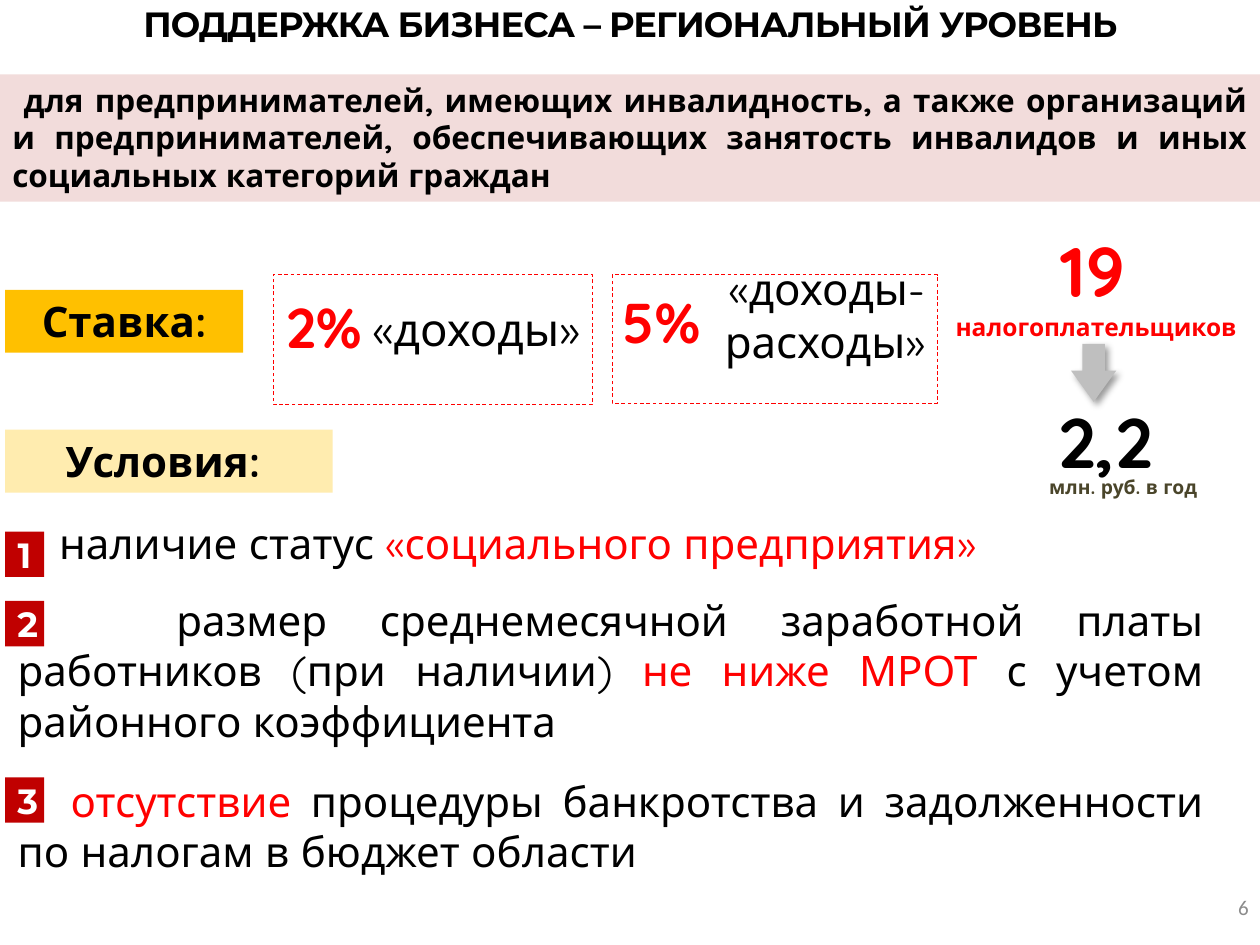
from dataclasses import dataclass
from typing import NamedTuple

from lxml import etree
from pptx import Presentation, util as u
from pptx.dml.color import RGBColor
from pptx.enum import dml, shapes, text
from pptx.oxml import parse_xml
from pptx.oxml.ns import nsdecls, qn

COLS, ROWS = 100, 75  # slide grid
AL = text.PP_ALIGN
TOP, MIDDLE = text.MSO_ANCHOR.TOP, text.MSO_ANCHOR.MIDDLE


@dataclass(frozen=True)
class Theme:
    head: str = "Montserrat"
    body: str = "Quicksand"
    number: str = "Calibri"
    ink: str = "000000"
    white: str = "FFFFFF"
    accent: str = "FF0000"
    badge: str = "C00000"
    band: str = "F2DCDB"
    rate: str = "FFC000"
    terms: str = "FFECAF"
    arrow: str = "BFBFBF"
    olive: str = "4A452A"
    grey: str = "8C8C8C"
    tiny: int = 11
    note: int = 12
    small: int = 14
    lead: int = 18
    title: int = 20
    text: int = 24
    split: int = 25
    income: int = 26
    rate_size: int = 32
    big: int = 40


class Box(NamedTuple):
    col: float
    row: float
    cols: float
    rows: float


class Condition(NamedTuple):
    runs: list
    indent: float  # first line, in columns
    before: int  # points
    badge_row: float


T = Theme()
prs = Presentation()
prs.slide_width, prs.slide_height = u.Inches(10), u.Inches(7.5)
slide = prs.slides.add_slide(prs.slide_layouts[1])


def across(cols: float) -> int:
    return round(prs.slide_width * cols / COLS)


def down(rows: float) -> int:
    return round(prs.slide_height * rows / ROWS)


def frame(box: Box) -> tuple:
    return across(box.col), down(box.row), across(box.cols), down(box.rows)


def place(sp, box: Box) -> None:
    sp.left, sp.top, sp.width, sp.height = frame(box)


def write(sp, *paragraphs, size=T.text, font=T.body, color=T.ink, bold=False,
          align=AL.LEFT, anchor=TOP, inset=(1, 0.5), spacing=0):
    """Each paragraph is a string or a list of (text, overrides) runs."""
    tf = sp.text_frame
    tf.word_wrap, tf.auto_size = True, text.MSO_AUTO_SIZE.NONE
    tf.vertical_anchor = anchor
    tf.margin_left = tf.margin_right = across(inset[0])
    tf.margin_top = tf.margin_bottom = down(inset[1])
    for i, runs in enumerate(paragraphs):
        p = tf.add_paragraph() if i else tf.paragraphs[0]
        p.alignment = align
        for words, own in [(runs, {})] if isinstance(runs, str) else runs:
            r = p.add_run()
            r.text = words
            r.font.name, r.font.bold = font, bold
            r.font.size = u.Pt(own.get("size", size))
            r.font.color.rgb = RGBColor.from_string(own.get("color", color))
            if spacing:
                r.font._element.set("spc", str(round(spacing * 100)))
    return tf


def label(box: Box, *paragraphs, **style) -> None:
    write(slide.shapes.add_textbox(*frame(box)), *paragraphs, **style)


def block(box: Box, fill=None, line=None, kind=shapes.MSO_SHAPE.RECTANGLE):
    sp = slide.shapes.add_shape(kind, *frame(box))
    sp.shadow.inherit = False
    if fill:
        sp.fill.solid()
        sp.fill.fore_color.rgb = RGBColor.from_string(fill)
    else:
        sp.fill.background()
    if line:
        sp.line.color.rgb = RGBColor.from_string(line)
        sp.line.width = u.Pt(0.5)
        sp.line.dash_style = dml.MSO_LINE.DASH
    else:
        sp.line.fill.background()
    return sp


def soft_shadow(sp) -> None:
    effects = sp._element.spPr.find(qn("a:effectLst"))
    effects.append(parse_xml(
        f'<a:outerShdw {nsdecls("a")} blurRad="{u.Pt(4)}" dist="{u.Pt(3)}" dir="2700000" '
        'algn="tl" rotWithShape="0"><a:srgbClr val="000000"><a:alpha val="40000"/>'
        '</a:srgbClr></a:outerShdw>'))


# Title and target group
title = slide.shapes.title
place(title, Box(0, -0.3, 100, 4.4))
write(title, "ПОДДЕРЖКА БИЗНЕСА – РЕГИОНАЛЬНЫЙ УРОВЕНЬ", size=T.title, font=T.head,
      bold=True, align=AL.CENTER, spacing=-0.5)
write(block(Box(0, 5.9, 100, 10.1), T.band),
      " для предпринимателей, имеющих инвалидность, а также организаций и "
      "предпринимателей, обеспечивающих занятость инвалидов и иных социальных "
      "категорий граждан", size=T.lead, bold=True, align=AL.JUSTIFY)

# Section headings
write(block(Box(0.4, 23, 18.9, 5), T.rate), "Ставка:", bold=True, align=AL.CENTER)
write(block(Box(0.4, 34.1, 26, 5), T.terms), "Условия: ", bold=True,
      align=AL.CENTER, anchor=MIDDLE)

# Rates
for outline, rate_box, rate, base_box, base, size in (
        (Box(21.7, 21.8, 25.3, 10.3), Box(21.7, 22.7, 13.3, 6.4), "2%",
         Box(20.9, 23.4, 26.1, 5.4), "«доходы»", T.income),
        (Box(48.6, 21.8, 25.8, 10.2), Box(48.4, 22.3, 12, 6.4), "5%",
         Box(48.4, 20.3, 26, 9.4), "«доходы- расходы»", T.split)):
    label(base_box, base, size=size, align=AL.RIGHT)
    label(rate_box, rate, size=T.rate_size, color=T.accent, bold=True)
    block(outline, line=T.accent)

# Result: taxpayers and yearly sum
label(Box(73.6, 17.6, 26.8, 10.1), [("19", {"size": T.big}), (" ", {})],
      "налогоплательщиков", size=T.small, color=T.accent, bold=True, align=AL.CENTER)
arrow = block(Box(85, 27.3, 3.6, 4.6), T.arrow, kind=shapes.MSO_SHAPE.DOWN_ARROW)
arrow.adjustments[0], arrow.adjustments[1] = 0.5, 0.69
soft_shadow(arrow)
for box, words, size, color in (
        (Box(76.7, 31.2, 22.1, 7.5), "2,2", T.big, T.ink),
        (Box(81.5, 37.3, 15.3, 2.6), "млн. руб. в год", T.tiny, T.olive)):
    label(box, words, size=size, color=color, bold=True, align=AL.CENTER,
          inset=(0.7, 0.4))

# Conditions: one list with a numbered badge for each item
RED = {"color": T.accent}
conditions = [
    Condition([("наличие статус ", {}), ("«социального предприятия»", RED)],
              3.3, 0, 42.2),
    Condition([("размер среднемесячной заработной платы работников (при наличии) ", {}),
               ("не ниже МРОТ ", RED), ("с учетом районного коэффициента ", {})],
              12.6, 15, 47.7),
    Condition([("отсутствие ", RED),
               ("процедуры банкротства и задолженности по налогам в бюджет области", {})],
              4.2, 17, 61.7),
]
body = slide.placeholders[1]
place(body, Box(0.4, 40.6, 96.1, 29.6))
tf = write(body, *(c.runs for c in conditions), align=AL.JUSTIFY)
for number, (p, c) in enumerate(zip(tf.paragraphs, conditions), 1):
    p.space_before = u.Pt(c.before)
    pPr = p._p.get_or_add_pPr()
    pPr.set("marL", "0")
    pPr.set("indent", str(across(c.indent)))
    etree.SubElement(pPr, qn("a:buNone"))
    write(block(Box(0.4, c.badge_row, 3.1, 3.6), T.badge), str(number), size=T.title,
          font=T.head, color=T.white, bold=True, align=AL.CENTER, anchor=MIDDLE)

# Page number
label(Box(76.8, 70, 23.3, 4), "6", size=T.note, font=T.number, color=T.grey,
      align=AL.RIGHT, anchor=MIDDLE)

prs.save("out.pptx")
